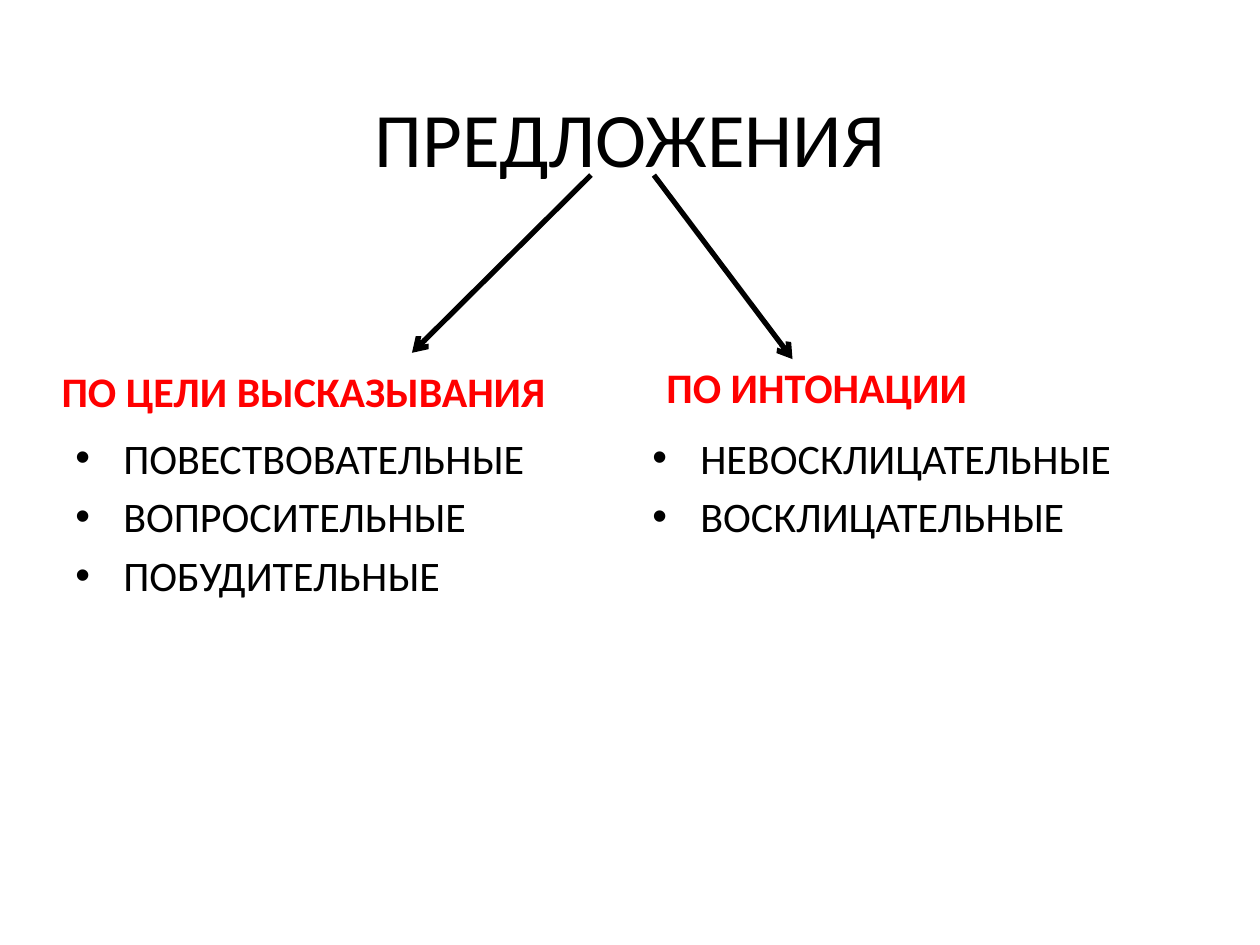
from lxml.etree import SubElement
from pptx import Presentation
from pptx.dml.color import RGBColor
from pptx.enum.shapes import MSO_CONNECTOR
from pptx.enum.text import MSO_ANCHOR, PP_ALIGN
from pptx.oxml.ns import qn
from pptx.util import Inches, Pt

BLACK = RGBColor(0, 0, 0)
RED = RGBColor(255, 0, 0)
FONT = "Calibri"

TITLE = "ПРЕДЛОЖЕНИЯ"
WIDTH = 4.42
INDENT = 0.38
# heading, its left and top, list left and height, list items
GROUPS = [
    ("ПО ЦЕЛИ ВЫСКАЗЫВАНИЯ", (0.39, 2.65), (0.5, 2.79),
     ["ПОВЕСТВОВАТЕЛЬНЫЕ", "ВОПРОСИТЕЛЬНЫЕ", "ПОБУДИТЕЛЬНЫЕ"]),
    ("ПО ИНТОНАЦИИ", (5.19, 2.62), (5.08, 2.87),
     ["НЕВОСКЛИЦАТЕЛЬНЫЕ", "ВОСКЛИЦАТЕЛЬНЫЕ"]),
]
ARROWS = [((4.69, 1.39), (3.27, 2.8)), ((5.19, 1.39), (6.29, 2.85))]


def write(shape, lines, size=24, color=BLACK, bold=False, align=PP_ALIGN.LEFT,
          anchor=MSO_ANCHOR.TOP, before=0.2, bullet=False):
    """Fill a shape with paragraphs; before is a share of the text size."""
    frame = shape.text_frame
    frame.word_wrap = True
    frame.vertical_anchor = anchor
    frame.text = "\n".join(lines)
    for para in frame.paragraphs:
        para.alignment = align
        para.space_before = Pt(size * before)
        font = para.runs[0].font
        font.name, font.size, font.bold = FONT, Pt(size), bold
        font.color.rgb = color
        if bullet:
            props = para._p.get_or_add_pPr()
            props.set("marL", str(Inches(INDENT)))
            props.set("indent", str(-Inches(INDENT)))
            SubElement(props, qn("a:buFont"), typeface="Arial")
            SubElement(props, qn("a:buChar"), char="•")


def add_box(slide, *place):
    return slide.shapes.add_textbox(*map(Inches, place))


def add_arrow(slide, start, end):
    line = slide.shapes.add_connector(
        MSO_CONNECTOR.STRAIGHT, *map(Inches, start + end))
    line.line.color.rgb = BLACK
    line.line.width = Pt(3)
    props = line._element.spPr
    SubElement(props.find(qn("a:ln")), qn("a:tailEnd"), type="arrow")
    SubElement(props, qn("a:effectLst"))


def main():
    deck = Presentation()
    deck.slide_width, deck.slide_height = Inches(10), Inches(7.5)
    slide = deck.slides.add_slide(deck.slide_layouts[5])

    title = slide.shapes.title
    title.left, title.top = Inches(0.5), Inches(0.3)
    title.width, title.height = Inches(9), Inches(1.57)
    write(title, [TITLE], size=44, align=PP_ALIGN.CENTER,
          anchor=MSO_ANCHOR.MIDDLE, before=0)

    for head, (left, top), (list_left, height), items in GROUPS:
        write(add_box(slide, left, top, WIDTH, 0.7), [head], color=RED,
              bold=True, anchor=MSO_ANCHOR.BOTTOM)
        write(add_box(slide, list_left, 3.38, WIDTH, height), items,
              bullet=True)

    for start, end in ARROWS:
        add_arrow(slide, start, end)

    deck.save("out.pptx")


if __name__ == "__main__":
    main()
